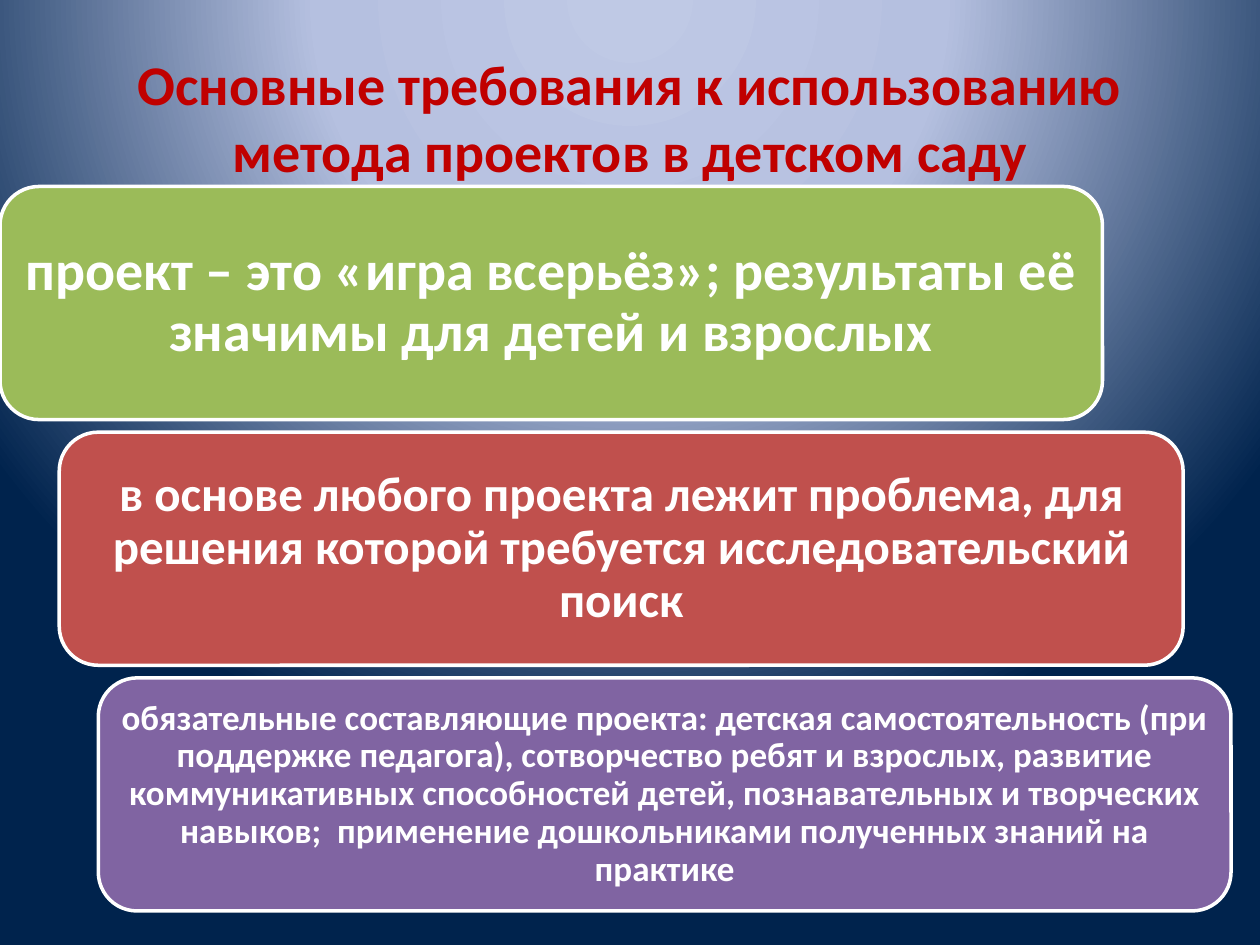
from pptx import Presentation
from pptx.dml.color import RGBColor
from pptx.enum.shapes import MSO_SHAPE
from pptx.enum.text import MSO_ANCHOR, MSO_AUTO_SIZE, PP_ALIGN
from pptx.oxml import parse_xml
from pptx.oxml.ns import nsdecls, qn
from pptx.util import Inches, Pt

WHITE = RGBColor(0xFF, 0xFF, 0xFF)
DARK_RED = RGBColor(0xC0, 0x00, 0x00)
GREEN = RGBColor(0x9B, 0xBB, 0x59)
RED = RGBColor(0xC0, 0x50, 0x4D)
PURPLE = RGBColor(0x80, 0x64, 0xA2)
GLOW = [(0, RGBColor(0xBF, 0xC9, 0xE5)),
        (40, RGBColor(0xB5, 0xC0, 0xE0)),
        (100, RGBColor(0x00, 0x23, 0x4D))]

FONT = "Calibri"
PANEL_TOP, PANEL_HEIGHT, PANEL_STEP = 1.48, 1.85, 1.95
PANEL_INSET = 0.04

# left, width, fill, text size, text
PANELS = [
    (0, 8.75, GREEN, 32,
     "проект – это «игра всерьёз»; результаты её значимы для детей и взрослых"),
    (0.47, 8.92, RED, 28,
     "в основе любого проекта лежит проблема, для решения которой "
     "требуется исследовательский поиск"),
    (0.78, 8.99, PURPLE, 20,
     "обязательные составляющие проекта: детская самостоятельность "
     "(при поддержке педагога), сотворчество ребят и взрослых, развитие "
     "коммуникативных способностей детей, познавательных и творческих "
     "навыков;  применение дошкольниками полученных знаний на практике"),
]


def write_text(tf, text, *, size, color, spacing=1.0):
    tf.word_wrap = True
    tf.auto_size = MSO_AUTO_SIZE.NONE
    tf.vertical_anchor = MSO_ANCHOR.MIDDLE
    p = tf.paragraphs[0]
    p.alignment = PP_ALIGN.CENTER
    p.line_spacing = spacing
    r = p.add_run()
    r.text = text
    r.font.name = FONT
    r.font.size = Pt(size)
    r.font.bold = True
    r.font.color.rgb = color


def set_glow_background(s, stops):
    """Fill the background with a circular gradient centred above the slide."""
    s.background.fill.solid()
    bg = s.element.find(".//" + qn("p:bgPr"))
    gs = "".join(f'<a:gs pos="{pos * 1000}"><a:srgbClr val="{color}"/></a:gs>'
                 for pos, color in stops)
    bg.replace(bg[0], parse_xml(
        f'<a:gradFill {nsdecls("a")} rotWithShape="1"><a:gsLst>{gs}</a:gsLst>'
        '<a:path path="circle"><a:fillToRect l="50000" t="-80000" '
        'r="50000" b="180000"/></a:path></a:gradFill>'))


def set_title(s, text):
    sp = s.shapes.title
    sp.left, sp.top = Inches(0.5), Inches(0.3)
    sp.width, sp.height = Inches(9), Inches(1.25)
    write_text(sp.text_frame, text, size=32, color=DARK_RED)


def add_panel(s, row, left, width, fill, size, text):
    top = PANEL_TOP + row * PANEL_STEP
    sp = s.shapes.add_shape(MSO_SHAPE.ROUNDED_RECTANGLE, Inches(left),
                            Inches(top), Inches(width), Inches(PANEL_HEIGHT))
    sp.shadow.inherit = False
    sp.fill.solid()
    sp.fill.fore_color.rgb = fill
    sp.line.color.rgb = WHITE
    sp.line.width = Pt(2)
    tf = sp.text_frame
    tf.margin_left = tf.margin_right = Inches(PANEL_INSET)
    tf.margin_top = tf.margin_bottom = Inches(PANEL_INSET)
    write_text(tf, text, size=size, color=WHITE, spacing=0.9)


def main():
    prs = Presentation()
    prs.slide_width, prs.slide_height = Inches(10), Inches(7.5)
    s = prs.slides.add_slide(prs.slide_layouts[5])
    set_glow_background(s, GLOW)
    set_title(s, "Основные требования к использованию метода проектов "
                 "в детском саду")
    for row, panel in enumerate(PANELS):
        add_panel(s, row, *panel)
    prs.save("out.pptx")


if __name__ == "__main__":
    main()
